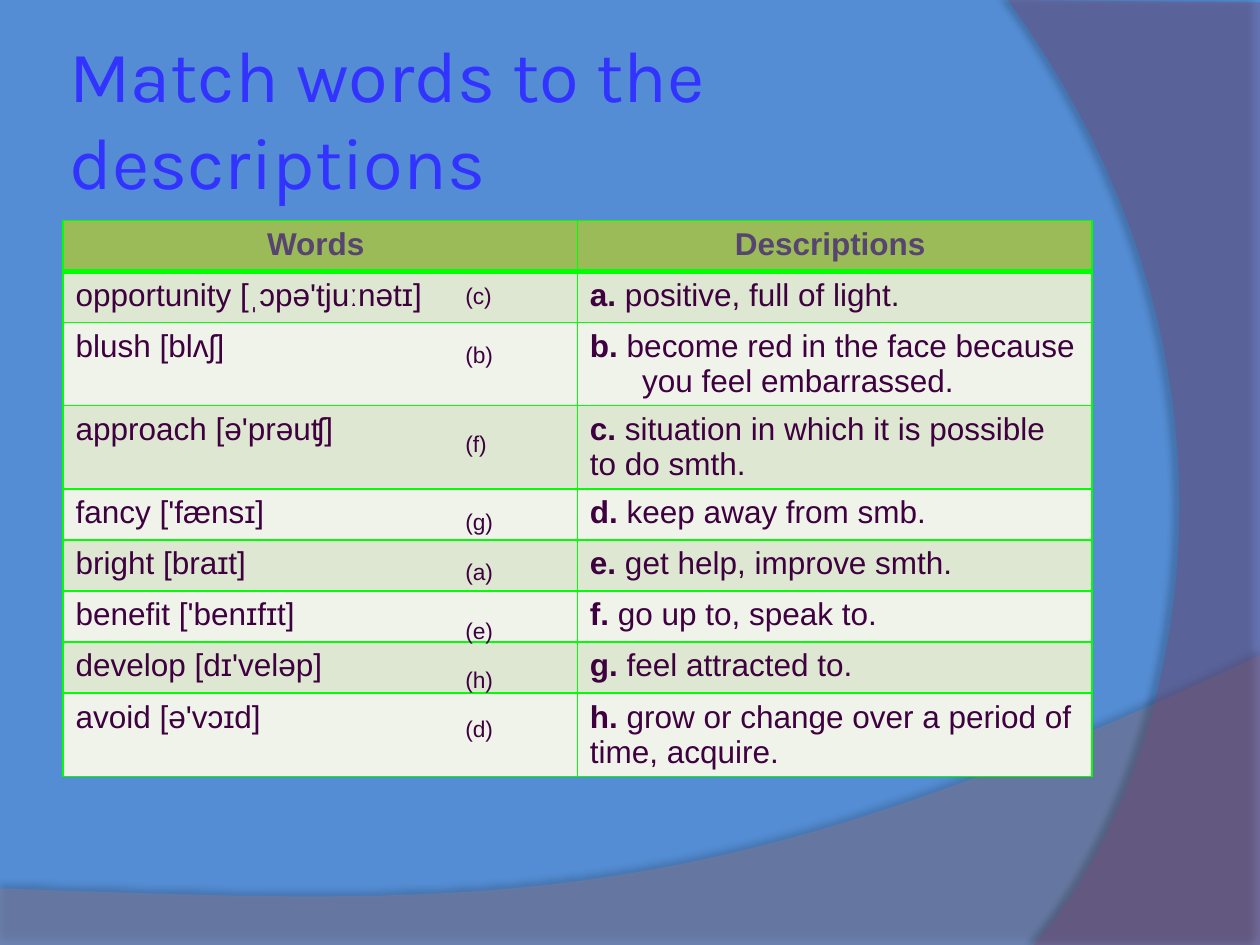
from lxml import etree
from pptx import Presentation
from pptx.dml.color import RGBColor
from pptx.enum.text import MSO_ANCHOR as Anchor, MSO_AUTO_SIZE as AutoSize, PP_ALIGN as Align
from pptx.oxml import parse_xml
from pptx.oxml.ns import nsdecls, qn
from pptx.util import Cm, Pt

SKY = RGBColor(0x54, 0x8D, 0xD4)
WAVE = RGBColor(0x8B, 0x7A, 0x8C)
ARC = RGBColor(0x7B, 0x4C, 0x7D)
TITLE_BLUE = RGBColor(0x33, 0x33, 0xFF)
GREEN = RGBColor(0x00, 0xFF, 0x00)
HEADER_FILL = RGBColor(0x9B, 0xBB, 0x59)
HEADER_TEXT = RGBColor(0x57, 0x44, 0x71)
PLUM = RGBColor(0x3F, 0x00, 0x40)
BANDS = [RGBColor(0xDE, 0xE7, 0xD1), RGBColor(0xEF, 0xF3, 0xEA)]


def write(paragraph, text, size=18, color=PLUM, bold=False, font="Arial", align=Align.LEFT):
    paragraph.alignment = align
    run = paragraph.add_run()
    run.text = text
    run.font.name = font
    run.font.size = Pt(size)
    run.font.bold = bold
    run.font.color.rgb = color


presentation = Presentation()
presentation.slide_width = Cm(25.4)
presentation.slide_height = Cm(19.05)
slide = presentation.slides.add_slide(presentation.slide_layouts[5])
slide.background.fill.solid()
slide.background.fill.fore_color.rgb = SKY

swooshes = [
    ([(0, 17.91), (0, 19.05), (25.4, 19.05), (25.4, 13.21)],
     [(14.2, 18.52), (9.93, 18.26), (0, 17.91)], WAVE, 45, 35, 3.5, 270),
    ([(25.4, 0.05), (25.4, 19.05), (20.85, 19.05)],
     [(23.75, 15.72), (25.86, 7.62), (20.32, 0)], ARC, 40, 45, 4, 180),
]
STEPS = 40
for corners, controls, color, opacity, shade, distance, angle in swooshes:
    points = list(corners)
    curve = [corners[-1]] + controls
    for step in range(1, STEPS + 1):
        t = step / STEPS
        weights = [(1 - t) ** 3, 3 * t * (1 - t) ** 2, 3 * t ** 2 * (1 - t), t ** 3]
        points.append(tuple(sum(w * p[axis] for w, p in zip(weights, curve)) for axis in (0, 1)))
    builder = slide.shapes.build_freeform(Cm(points[0][0]), Cm(points[0][1]))
    builder.add_line_segments([(Cm(x), Cm(y)) for x, y in points[1:]], close=True)
    shape = builder.convert_to_shape()
    shape.fill.solid()
    shape.fill.fore_color.rgb = color
    shape.line.fill.background()
    fill_color = shape._element.spPr.find(qn("a:solidFill"))[0]
    etree.SubElement(fill_color, qn("a:alpha"), val=str(opacity * 1000))
    shape._element.spPr.append(parse_xml(
        f'<a:effectLst {nsdecls("a")}><a:outerShdw blurRad="{Pt(4)}" dist="{Pt(distance)}" '
        f'dir="{angle * 60000}"><a:srgbClr val="000000"><a:alpha val="{shade * 1000}"/>'
        '</a:srgbClr></a:outerShdw></a:effectLst>'))

title = slide.shapes.title
shape._element.addnext(title._element)
title.left, title.top, title.width, title.height = Cm(1.27), Cm(0.76), Cm(20.75), Cm(3.18)
frame = title.text_frame
frame.word_wrap = True
frame.auto_size = AutoSize.NONE
frame.vertical_anchor = Anchor.MIDDLE
frame.margin_left = frame.margin_right = frame.margin_top = frame.margin_bottom = Cm(0.13)
write(frame.paragraphs[0], "Match words to the descriptions", size=41.4, color=TITLE_BLUE, font="Karla")

entries = [
    ("opportunity [ˌɔpə'tjuːnətɪ]", "positive, full of light."),
    ("blush [blʌʃ]", "become red in the face because you feel embarrassed."),
    ("approach [ə'prəuʧ]", "situation in which it is possible to do smth."),
    ("fancy ['fænsɪ]", "keep away from smb."),
    ("bright [braɪt]", "get help, improve smth."),
    ("benefit ['benɪfɪt]", "go up to, speak to."),
    ("develop [dɪ'veləp]", "feel attracted to."),
    ("avoid [ə'vɔɪd]", "grow or change over a period of time, acquire."),
]
table = slide.shapes.add_table(len(entries) + 1, 2, Cm(1.27), Cm(4.44), Cm(20.74), Cm(9.27)).table
for row_index, row in enumerate(table.rows):
    row.height = Cm(1.03)
    for cell in row.cells:
        properties = cell._tc.get_or_add_tcPr()
        for side in ("L", "R", "T", "B"):
            thick = (row_index, side) in ((0, "B"), (1, "T"))
            properties.append(parse_xml(
                f'<a:ln{side} {nsdecls("a")} w="{Pt(3 if thick else 1)}"><a:solidFill>'
                f'<a:srgbClr val="{GREEN}"/></a:solidFill></a:ln{side}>'))
        cell.fill.solid()
        cell.fill.fore_color.rgb = BANDS[(row_index - 1) % 2] if row_index else HEADER_FILL

for column, heading in enumerate(("Words ", "Descriptions ")):
    write(table.cell(0, column).text_frame.paragraphs[0], heading,
          color=HEADER_TEXT, bold=True, align=Align.CENTER)
for row_index, (letter, (word, description)) in enumerate(zip("abcdefgh", entries), start=1):
    write(table.cell(row_index, 0).text_frame.paragraphs[0], word)
    paragraph = table.cell(row_index, 1).text_frame.paragraphs[0]
    if letter == "b":
        paragraph_properties = paragraph._p.get_or_add_pPr()
        paragraph_properties.set("marL", str(Cm(1.05)))
        paragraph_properties.set("indent", str(-Cm(1.05)))
    write(paragraph, f"{letter}. ", bold=True)
    write(paragraph, description)

answer_tops = [5.56, 6.75, 8.53, 10.11, 11.12, 12.3, 13.29, 14.29]
for answer, top in zip("cbfgaehd", answer_tops):
    box = slide.shapes.add_textbox(Cm(9.13), Cm(top), Cm(1.19), Cm(0.81))
    box.text_frame.word_wrap = True
    box.text_frame.auto_size = AutoSize.SHAPE_TO_FIT_TEXT
    write(box.text_frame.paragraphs[0], f"({answer})", size=13)

presentation.save("out.pptx")
